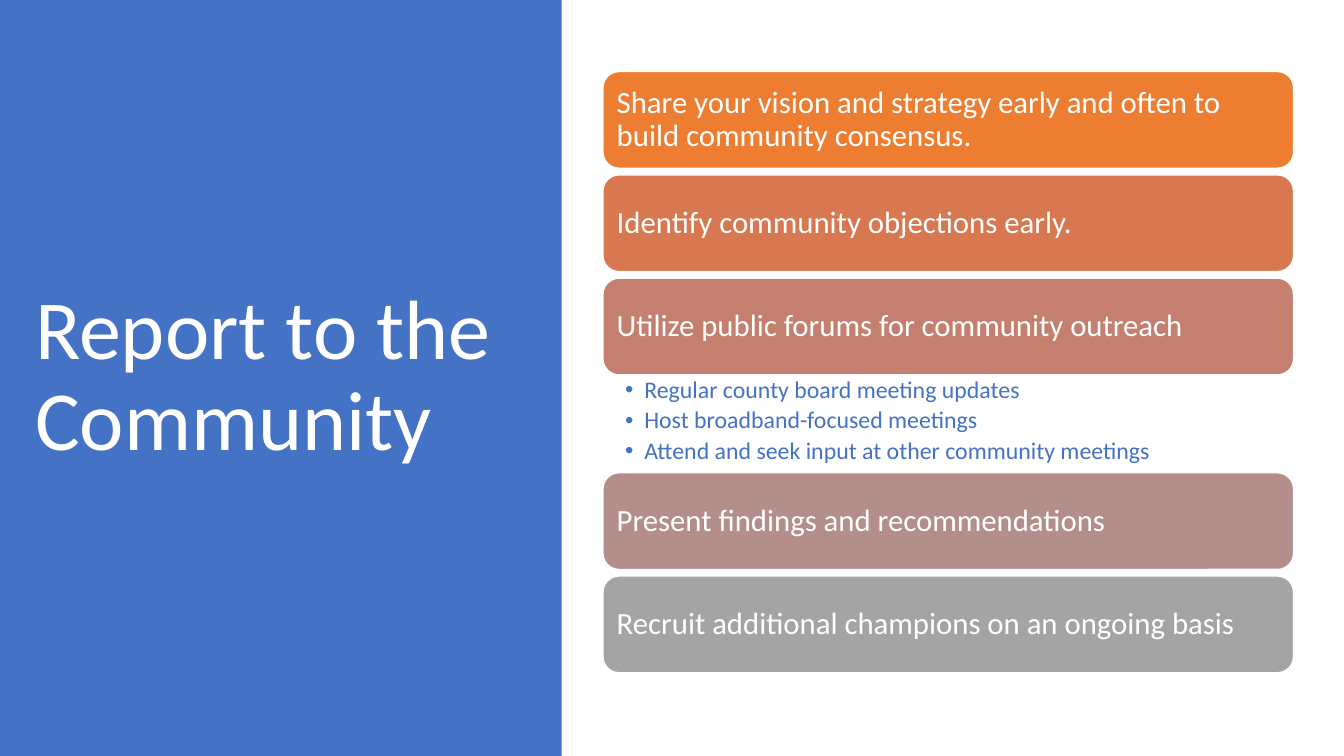
from pptx import Presentation
from pptx.dml.color import RGBColor
from pptx.enum.shapes import MSO_SHAPE
from pptx.enum.text import MSO_ANCHOR, PP_ALIGN
from pptx.oxml.ns import qn
from pptx.util import Inches, Pt
from lxml.etree import SubElement

WHITE = RGBColor(0xFF, 0xFF, 0xFF)
BLUE = RGBColor(0x44, 0x72, 0xC4)
ORANGE = RGBColor(0xED, 0x7D, 0x31)
TERRACOTTA = RGBColor(0xD7, 0x78, 0x50)
ROSE = RGBColor(0xC4, 0x7F, 0x6E)
MAUVE = RGBColor(0xB3, 0x8E, 0x8A)
GRAY = RGBColor(0xA4, 0xA4, 0xA4)

FONT = "Calibri"
LIST_LEFT, LIST_TOP, LIST_WIDTH = 5.98, 0.71, 6.85
BAR_HEIGHT, BAR_GAP, BULLETS_HEIGHT = 0.96, 0.065, 0.97

# Each step: bar text, bar colour, bullets below it
STEPS = [
    ("Share your vision and strategy early and often to build community consensus.", ORANGE, []),
    ("Identify community objections early.", TERRACOTTA, []),
    ("Utilize public forums for community outreach", ROSE, [
        "Regular county board meeting updates",
        "Host broadband-focused meetings",
        "Attend and seek input at other community meetings",
    ]),
    ("Present findings and recommendations", MAUVE, []),
    ("Recruit additional champions on an ongoing basis", GRAY, []),
]


def add_bullet(p, indent):
    pPr = p._p.get_or_add_pPr()
    pPr.set("marL", str(Inches(indent)))
    pPr.set("indent", str(-Inches(indent)))
    SubElement(pPr, qn("a:buFont")).set("typeface", "Arial")
    SubElement(pPr, qn("a:buChar")).set("char", "•")


def write_text(sp, lines, size, color=WHITE, insets=(0.1, 0.05, 0.1, 0.05),
               anchor=MSO_ANCHOR.MIDDLE, space_before=0, bullets=False):
    """Fill a shape with one paragraph per line; insets are left, top, right, bottom."""
    tf = sp.text_frame
    tf.word_wrap = True
    tf.vertical_anchor = anchor
    tf.margin_left, tf.margin_top, tf.margin_right, tf.margin_bottom = map(Inches, insets)
    for i, line in enumerate(lines):
        p = tf.add_paragraph() if i else tf.paragraphs[0]
        p.alignment = PP_ALIGN.LEFT
        p.line_spacing = 0.9
        p.space_before = Pt(space_before if i else 0)
        if bullets:
            add_bullet(p, 0.19)
        r = p.add_run()
        r.text = line
        r.font.name = FONT
        r.font.size = Pt(size)
        r.font.color.rgb = color


def add_box(s, kind, left, top, width, height, fill):
    sp = s.shapes.add_shape(kind, Inches(left), Inches(top), Inches(width), Inches(height))
    sp.shadow.inherit = False
    sp.fill.solid()
    sp.fill.fore_color.rgb = fill
    sp.line.fill.background()
    return sp


def add_text_box(s, left, top, width, height, lines, **text_format):
    sp = s.shapes.add_textbox(Inches(left), Inches(top), Inches(width), Inches(height))
    write_text(sp, lines, **text_format)


def add_bar(s, top, text, fill):
    sp = add_box(s, MSO_SHAPE.ROUNDED_RECTANGLE, LIST_LEFT, top, LIST_WIDTH, BAR_HEIGHT, fill)
    sp.line.color.rgb = WHITE
    sp.line.width = Pt(1)
    write_text(sp, [text], size=22, insets=(0.09,) * 4)


def add_steps(s):
    top = LIST_TOP
    for text, fill, bullets in STEPS:
        add_bar(s, top, text, fill)
        top += BAR_HEIGHT
        if bullets:
            add_text_box(s, LIST_LEFT, top, LIST_WIDTH, BULLETS_HEIGHT, bullets, size=17,
                         color=BLUE, insets=(0.22, 0.03, 0.17, 0.03),
                         anchor=MSO_ANCHOR.TOP, space_before=3.4, bullets=True)
            top += BULLETS_HEIGHT
        else:
            top += BAR_GAP


def main():
    prs = Presentation()
    prs.slide_width, prs.slide_height = Inches(13.33), Inches(7.5)
    s = prs.slides.add_slide(prs.slide_layouts[6])
    add_box(s, MSO_SHAPE.RECTANGLE, 0, 0, 5.57, 7.5, BLUE)
    add_text_box(s, 0.25, 0.74, 5.06, 6.02, ["Report to the Community"], size=60)
    add_steps(s)
    prs.save("out.pptx")


if __name__ == "__main__":
    main()
